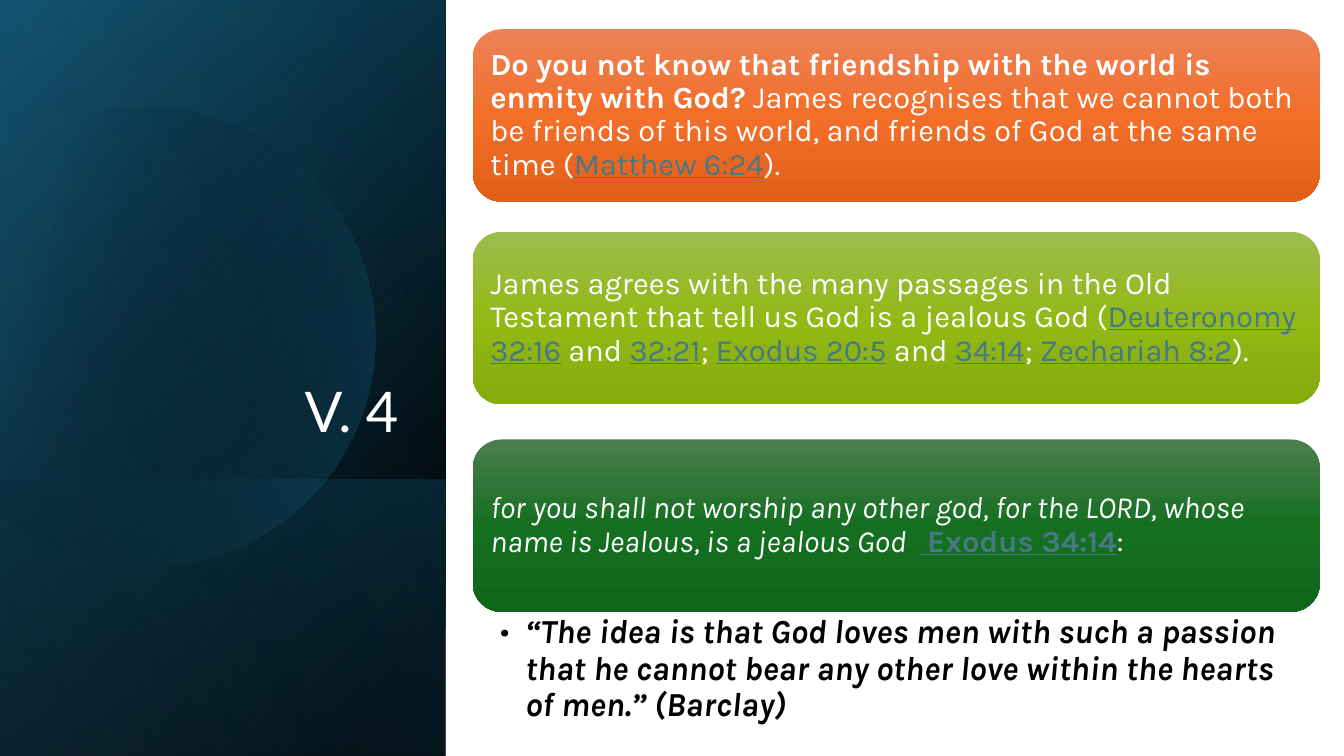
"""Build the verse slide: a dark title panel beside three cards and a quotation."""
from dataclasses import dataclass
from typing import NamedTuple

from lxml import etree
from pptx import Presentation
from pptx import util as u
from pptx.dml.color import RGBColor
from pptx.enum import shapes as sh, text as tx
from pptx.oxml import ns


@dataclass(frozen=True)
class Theme:
    """Colours, fonts and type sizes."""
    white: str = "FFFFFF"
    black: str = "000000"
    link: str = "467886"
    navy: str = "104862"
    teal: str = "156082"
    sky: str = "46B1E1"
    head: str = "Lato"
    body: str = "Karla"
    title: int = 40
    card: int = 22
    quote: int = 24


class Stop(NamedTuple):
    """One gradient stop, in percent."""
    pos: int
    color: str
    alpha: int = 100


class Run(NamedTuple):
    """A piece of text and its style letters: b, i, or u for a link."""
    text: str
    style: str = ""


class Box(NamedTuple):
    """A frame in inches."""
    x: float
    y: float
    w: float
    h: float

    def emu(self) -> list:
        """Return the frame as lengths."""
        return [u.Inches(v) for v in self]


class Layer(NamedTuple):
    """A turned gradient rectangle of the panel."""
    box: Box
    angle: int
    stops: list


class Card(NamedTuple):
    """A rounded card with its gradient colours and text."""
    top: float
    colors: tuple
    runs: list


T = Theme()
FULL = Box(-1.54, 1.54, 7.5, 4.42)
LOW = Box(0.84, 3.92, 2.74, 4.42)
ROUND = Box(-0.85, 1.06, 4.57, 4.57)
LEFT, WIDE, TALL = 4.69, 8.4, 1.71

BACK = [
    Layer(FULL, 50, [Stop(8, T.black), Stop(100, T.navy)]),
    Layer(FULL, 30, [Stop(0, T.black, 0), Stop(99, T.teal, 46)]),
    Layer(LOW, 130, [Stop(2, T.teal, 29), Stop(100, T.black, 30)]),
]
DISC = [Stop(29, T.black, 0), Stop(100, T.teal, 43)]
GLOW = Layer(FULL, 120, [Stop(0, T.black, 0), Stop(99, T.sky, 11)])

CARDS = [
    Card(0.29, ("ED8257", "F26E29", "E25F1A"), [
        Run("Do you not know that friendship with the world is enmity with God?", "b"),
        Run(" James recognises that we cannot both be friends of this world, "
            "and friends of God at the same time ("),
        Run("Matthew 6:24", "u"), Run(").")]),
    Card(2.3, ("9CBD4E", "92B916", "85AB0D"), [
        Run("James agrees with the many passages in the Old Testament "
            "that tell us God is a jealous God ("),
        Run("Deuteronomy 32:16", "u"), Run(" and "), Run("32:21", "u"), Run("; "),
        Run("Exodus 20:5", "u"), Run(" and "), Run("34:14", "u"), Run("; "),
        Run("Zechariah 8:2", "u"), Run(").")]),
    Card(4.36, ("4D7E50", "156F21", "0F661B"), [
        Run("for you shall not worship any other god, for the LORD, "
            "whose name is Jealous, is a jealous God  ", "i"),
        Run(" Exodus 34:14", "bu"), Run(":")]),
]
QUOTE = [Run("“The idea is that God loves men with such a passion that he cannot "
             "bear any other love within the hearts of men.” (Barclay)", "bi")]


def shade(shape, stops: list, angle: int) -> None:
    """Give a shape a linear gradient and no line or shadow."""
    shape.shadow.inherit = False
    shape.line.fill.background()
    shape.fill.gradient()
    grad = shape._element.spPr.find(ns.qn("a:gradFill"))
    grad.set("rotWithShape", "1")
    for kid in list(grad):
        grad.remove(kid)
    items = etree.SubElement(grad, ns.qn("a:gsLst"))
    for stop in stops:
        item = etree.SubElement(items, ns.qn("a:gs"), pos=str(stop.pos * 1000))
        color = etree.SubElement(item, ns.qn("a:srgbClr"), val=stop.color)
        if stop.alpha < 100:
            etree.SubElement(color, ns.qn("a:alpha"), val=str(stop.alpha * 1000))
    etree.SubElement(grad, ns.qn("a:lin"), ang=str(angle * 60000), scaled="0")


def write(shape, runs: list, *, size: int, font: str = T.body, color: str = T.white,
          anchor=tx.MSO_ANCHOR.MIDDLE, align=tx.PP_ALIGN.LEFT,
          inset: tuple = (0.1, 0.05, 0.1, 0.05), bullet: str = "") -> None:
    """Fill a shape with one formatted paragraph."""
    frame = shape.text_frame
    frame.word_wrap = True
    frame.vertical_anchor = anchor
    (frame.margin_left, frame.margin_top,
     frame.margin_right, frame.margin_bottom) = map(u.Inches, inset)
    para = frame.paragraphs[0]
    para.alignment = align
    para.line_spacing = 0.9
    if bullet:
        props = para._p.get_or_add_pPr()
        props.set("marL", str(u.Inches(0.25)))
        props.set("indent", str(u.Inches(-0.25)))
        etree.SubElement(props, ns.qn("a:buFont"), typeface=font)
        etree.SubElement(props, ns.qn("a:buChar"), char=bullet)
    for part in runs:
        run = para.add_run()
        run.text = part.text
        face = run.font
        face.name, face.size = font, u.Pt(size)
        face.bold, face.italic = "b" in part.style, "i" in part.style
        face.underline = "u" in part.style
        face.color.rgb = RGBColor.from_string(T.link if face.underline else color)


def add_layer(slide, layer: Layer) -> None:
    """Draw one turned and mirrored panel layer."""
    rect = slide.shapes.add_shape(sh.MSO_SHAPE.RECTANGLE, *layer.box.emu())
    rect.rotation = 90
    rect._element.spPr.xfrm.set("flipH", "1")
    shade(rect, layer.stops, layer.angle)


def add_disc(slide) -> None:
    """Draw the faint cut disc on the panel."""
    disc = slide.shapes.add_shape(sh.MSO_SHAPE.CHORD, *ROUND.emu())
    for k, angle in enumerate((226, 134)):
        disc.adjustments[k] = angle * 0.6
    shade(disc, DISC, 14)


def add_card(slide, card: Card) -> None:
    """Draw one rounded card with its text."""
    box = Box(LEFT, card.top, WIDE, TALL)
    shape = slide.shapes.add_shape(sh.MSO_SHAPE.ROUNDED_RECTANGLE, *box.emu())
    shade(shape, [Stop(p, c) for p, c in zip((0, 50, 100), card.colors)], 90)
    write(shape, card.runs, size=T.card, inset=(0.09,) * 4)


def main() -> None:
    """Build and save the slide."""
    deck = Presentation()
    deck.slide_width, deck.slide_height = u.Inches(13.33), u.Inches(7.5)
    slide = deck.slides.add_slide(deck.slide_layouts[6])
    for layer in BACK:
        add_layer(slide, layer)
    add_disc(slide)
    add_layer(slide, GLOW)
    title = slide.shapes.add_textbox(*Box(0.64, 1.84, 3.41, 2.62).emu())
    write(title, [Run("V. 4")], size=T.title, font=T.head,
          anchor=tx.MSO_ANCHOR.BOTTOM, align=tx.PP_ALIGN.RIGHT)
    for card in CARDS:
        add_card(slide, card)
    quote = slide.shapes.add_textbox(*Box(LEFT, 6.06, WIDE, 1.19).emu())
    write(quote, QUOTE, size=T.quote, color=T.black, anchor=tx.MSO_ANCHOR.TOP,
          inset=(0.27, 0.04, 0.24, 0.04), bullet="•")
    deck.save("out.pptx")


if __name__ == "__main__":
    main()
